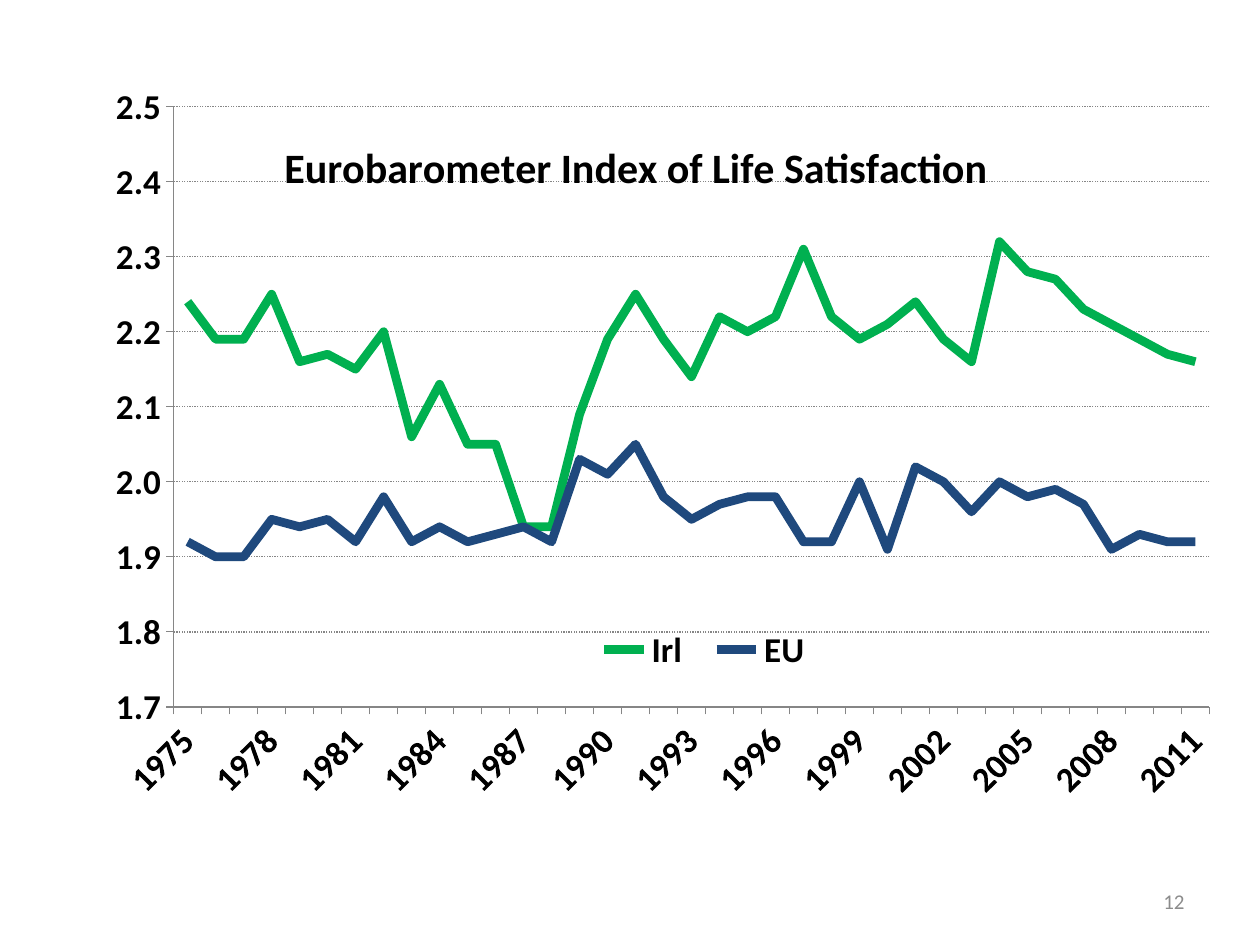
import pptx
import pptx.chart.data
import pptx.dml.color
import pptx.enum.chart
import pptx.enum.dml
import pptx.enum.text
import pptx.oxml
import pptx.oxml.ns
import pptx.util

BLACK = pptx.dml.color.RGBColor(0x00, 0x00, 0x00)
GREY = pptx.dml.color.RGBColor(0x8C, 0x8C, 0x8C)
AXIS_GREY = pptx.dml.color.RGBColor(0x86, 0x86, 0x86)
GREEN = pptx.dml.color.RGBColor(0x00, 0xB0, 0x50)
NAVY = pptx.dml.color.RGBColor(0x1F, 0x49, 0x7D)
FONT = "Calibri"

WIDTH = pptx.util.Inches(10)
HEIGHT = pptx.util.Inches(7.5)
YEARS = range(1975, 2012)
LABEL_STEP = 3
SATISFACTION = {
    "Irl": (GREEN, [
        2.24, 2.19, 2.19, 2.25, 2.16, 2.17, 2.15, 2.2, 2.06, 2.13, 2.05, 2.05, 1.94,
        1.94, 2.09, 2.19, 2.25, 2.19, 2.14, 2.22, 2.2, 2.22, 2.31, 2.22, 2.19, 2.21,
        2.24, 2.19, 2.16, 2.32, 2.28, 2.27, 2.23, 2.21, 2.19, 2.17, 2.16]),
    "EU": (NAVY, [
        1.92, 1.9, 1.9, 1.95, 1.94, 1.95, 1.92, 1.98, 1.92, 1.94, 1.92, 1.93, 1.94,
        1.92, 2.03, 2.01, 2.05, 1.98, 1.95, 1.97, 1.98, 1.98, 1.92, 1.92, 2, 1.91,
        2.02, 2, 1.96, 2, 1.98, 1.99, 1.97, 1.91, 1.93, 1.92, 1.92]),
}


def place(left, top, width, height):
    return int(WIDTH * left), int(HEIGHT * top), int(WIDTH * width), int(HEIGHT * height)


def format_font(font, size, color, bold=False):
    font.name = FONT
    font.size = pptx.util.Pt(size)
    font.bold = bold
    font.color.rgb = color


def format_line(line, color, width):
    line.color.rgb = color
    line.width = pptx.util.Pt(width)


def set_layout(parent, left, top, width=None, height=None, inner=False):
    for old in parent.findall(pptx.oxml.ns.qn("c:layout")):
        parent.remove(old)
    shares = {"x": left, "y": top, "w": width, "h": height}
    target = '<c:layoutTarget val="inner"/>' if inner else ""
    modes = "".join(f'<c:{key}Mode val="edge"/>' for key in "xy")
    values = "".join(
        f'<c:{key} val="{share}"/>' for key, share in shares.items() if share is not None)
    layout = pptx.oxml.parse_xml(
        f'<c:layout {pptx.oxml.ns.nsdecls("c")}><c:manualLayout>'
        f"{target}{modes}{values}</c:manualLayout></c:layout>")
    overlay = parent.find(pptx.oxml.ns.qn("c:overlay"))
    if overlay is None:
        parent.insert(0, layout)
    else:
        overlay.set("val", "1")
        overlay.addprevious(layout)


def format_axes(chart):
    years = chart.category_axis
    scores = chart.value_axis
    scores.minimum_scale = 1.7
    scores.maximum_scale = 2.5
    scores.major_unit = 0.1
    scores.has_major_gridlines = True
    gridline = scores.major_gridlines.format.line
    format_line(gridline, AXIS_GREY, 0.75)
    gridline.dash_style = pptx.enum.dml.MSO_LINE.ROUND_DOT
    for axis, number_format in ((years, "0"), (scores, "#,##0.0")):
        axis.major_tick_mark = pptx.enum.chart.XL_TICK_MARK.OUTSIDE
        axis.tick_labels.number_format = number_format
        axis.tick_labels.number_format_is_linked = False
        format_font(axis.tick_labels.font, 20, BLACK, True)
        format_line(axis.format.line, AXIS_GREY, 0.75)
    body = years._element.find(".//" + pptx.oxml.ns.qn("a:bodyPr"))
    body.set("rot", "-2700000")
    body.set("vert", "horz")
    skip = pptx.oxml.parse_xml(
        f'<c:tickLblSkip {pptx.oxml.ns.nsdecls("c")} val="{LABEL_STEP}"/>')
    years._element.find(pptx.oxml.ns.qn("c:noMultiLvlLbl")).addprevious(skip)


def add_satisfaction_chart(page):
    data = pptx.chart.data.CategoryChartData(number_format="0.00")
    data.categories = [str(year) for year in YEARS]
    for name, (color, values) in SATISFACTION.items():
        data.add_series(name, values)
    chart = page.shapes.add_chart(
        pptx.enum.chart.XL_CHART_TYPE.LINE, *place(0.043, 0.09, 0.93, 0.77), data).chart
    format_font(chart.font, 20, BLACK, True)

    chart.has_title = True
    title = chart.chart_title.text_frame.paragraphs[0]
    title.text = "Eurobarometer Index of Life Satisfaction"
    format_font(title.font, 24, BLACK, True)

    chart.has_legend = True
    chart.legend.position = pptx.enum.chart.XL_LEGEND_POSITION.BOTTOM
    chart.legend.include_in_layout = False
    format_font(chart.legend.font, 20, BLACK, True)

    chart.plots[0].vary_by_categories = False
    for series in chart.plots[0].series:
        series.smooth = False
        series.marker.style = pptx.enum.chart.XL_MARKER_STYLE.NONE
        format_line(series.format.line, SATISFACTION[series.name][0], 5)
    format_axes(chart)

    root = chart._chartSpace.chart
    set_layout(root.find(pptx.oxml.ns.qn("c:title")), 0.19, 0.06)
    set_layout(root.find(pptx.oxml.ns.qn("c:legend")), 0.45, 0.74, 0.21, 0.07)
    set_layout(root.plotArea, 0.102, 0.025, 0.884, 0.829, inner=True)


def add_page_number(page, number):
    box = page.shapes.add_textbox(*place(0.717, 0.927, 0.233, 0.053))
    frame = box.text_frame
    frame.word_wrap = True
    frame.vertical_anchor = pptx.enum.text.MSO_ANCHOR.MIDDLE
    para = frame.paragraphs[0]
    para.text = number
    para.alignment = pptx.enum.text.PP_ALIGN.RIGHT
    format_font(para.font, 12, GREY)


def main():
    deck = pptx.Presentation()
    deck.slide_width = WIDTH
    deck.slide_height = HEIGHT
    page = deck.slides.add_slide(deck.slide_layouts.get_by_name("Blank"))
    add_satisfaction_chart(page)
    add_page_number(page, "12")
    deck.save("out.pptx")


if __name__ == "__main__":
    main()
